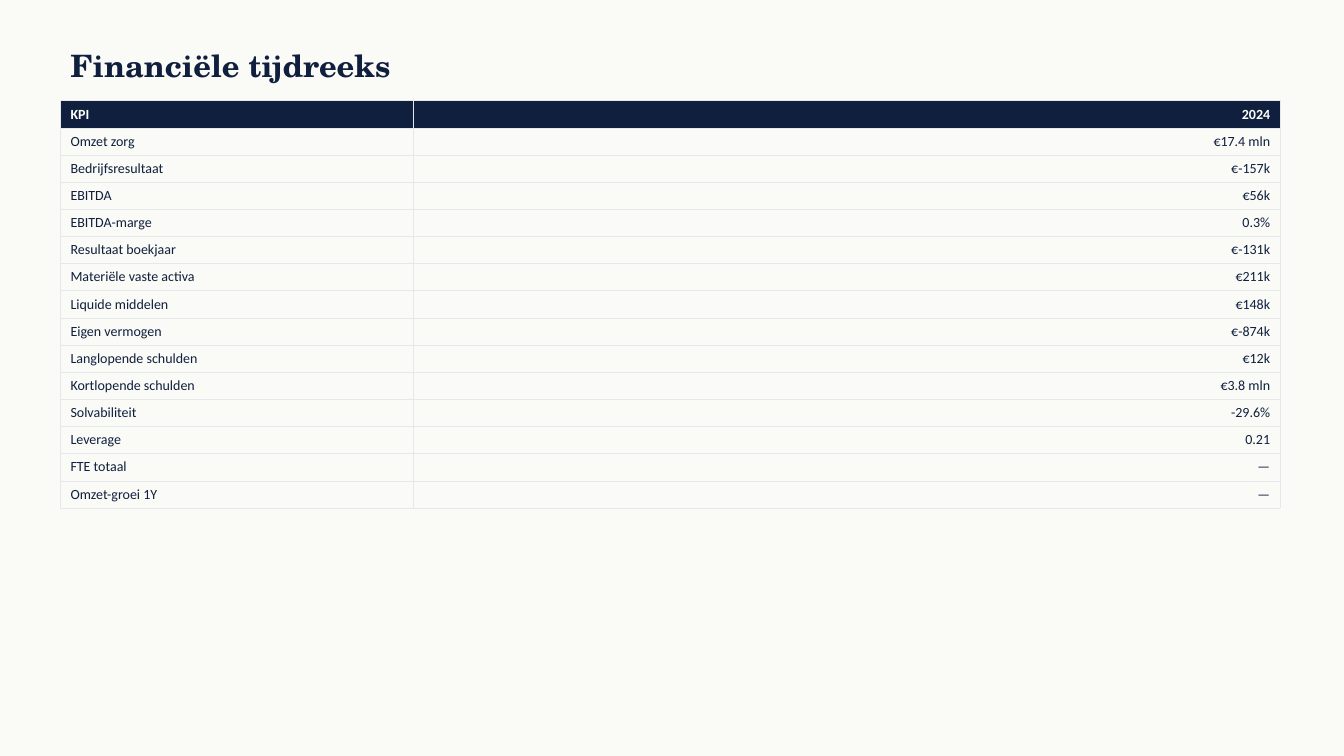
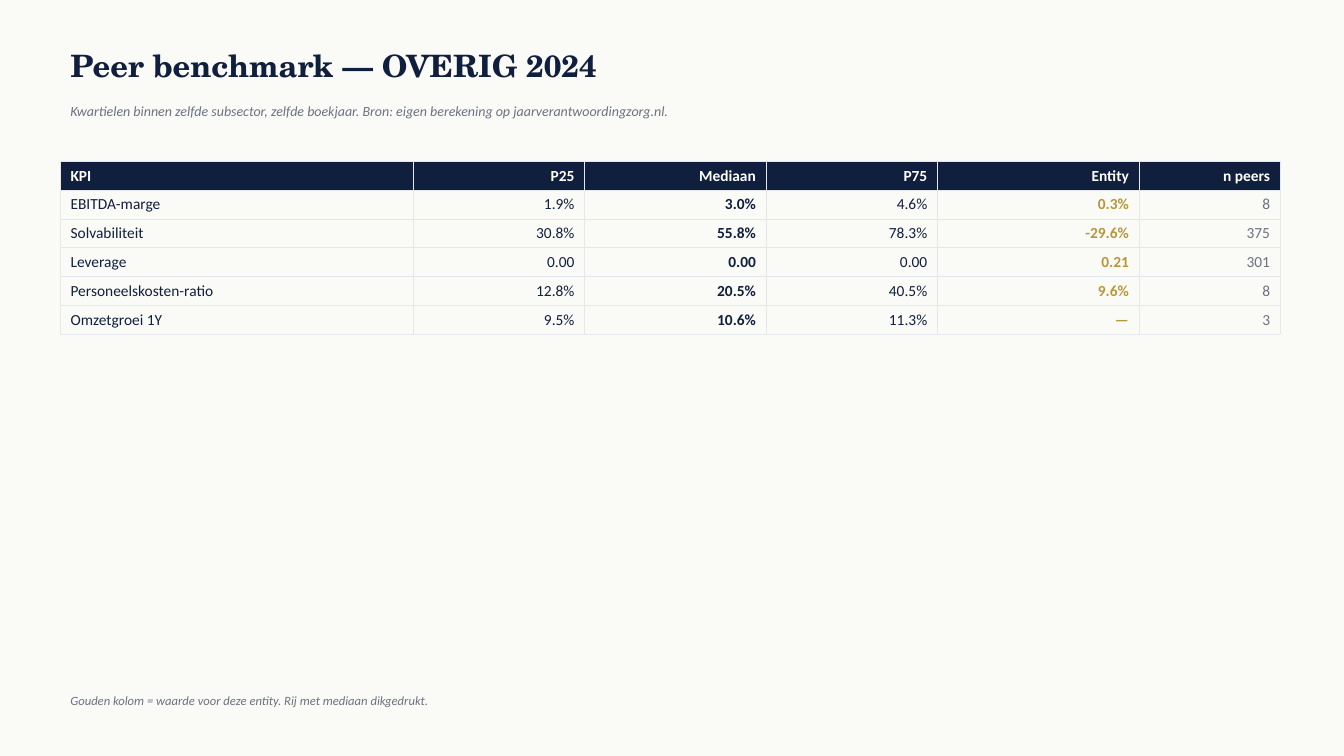
from dataclasses import dataclass

from lxml import etree
from pptx import Presentation
from pptx.dml.color import RGBColor
from pptx.enum.text import MSO_ANCHOR, PP_ALIGN
from pptx.oxml.ns import qn
from pptx.util import Pt

MIDDLE = MSO_ANCHOR.MIDDLE
LEFT, RIGHT = PP_ALIGN.LEFT, PP_ALIGN.RIGHT


@dataclass(frozen=True)
class Theme:
    paper: str = "FAFAF7"
    navy: str = "0F1F3D"
    white: str = "FFFFFF"
    gold: str = "B8973B"
    grey: str = "6B7280"
    rule: str = "E5E7EB"
    serif: str = "TeX Gyre Schola"
    sans: str = "Calibri"
    title: float = 22
    table: float = 11
    dense: float = 10
    lead: float = 10
    note: float = 9
    line: float = 0.5


THEME = Theme()
EDGE, WIDE = 43.2, 864

SERIES = [
    ("KPI", "2024"),
    ("Omzet zorg", "€17.4 mln"),
    ("Bedrijfsresultaat", "€-157k"),
    ("EBITDA", "€56k"),
    ("EBITDA-marge", "0.3%"),
    ("Resultaat boekjaar", "€-131k"),
    ("Materiële vaste activa", "€211k"),
    ("Liquide middelen", "€148k"),
    ("Eigen vermogen", "€-874k"),
    ("Langlopende schulden", "€12k"),
    ("Kortlopende schulden", "€3.8 mln"),
    ("Solvabiliteit", "-29.6%"),
    ("Leverage", "0.21"),
    ("FTE totaal", "—"),
    ("Omzet-groei 1Y", "—"),
]
PEERS = [
    ("KPI", "P25", "Mediaan", "P75", "Entity", "n peers"),
    ("EBITDA-marge", "1.9%", "3.0%", "4.6%", "0.3%", "8"),
    ("Solvabiliteit", "30.8%", "55.8%", "78.3%", "-29.6%", "375"),
    ("Leverage", "0.00", "0.00", "0.00", "0.21", "301"),
    ("Personeelskosten-ratio", "12.8%", "20.5%", "40.5%", "9.6%", "8"),
    ("Omzetgroei 1Y", "9.5%", "10.6%", "11.3%", "—", "3"),
]
# Body style per column: colour, bold
PLAIN = (THEME.navy, False)
LOOKS = {
    "Mediaan": (THEME.navy, True),
    "Entity": (THEME.gold, True),
    "n peers": (THEME.grey, False),
}

SLIDES = [
    {
        "title": "Financiële tijdreeks",
        "rows": SERIES, "cols": (252, 619.2),
        "top": 72, "high": 19.4, "size": THEME.dense,
    },
    {
        "title": "Peer benchmark — OVERIG 2024",
        "lead": "Kwartielen binnen zelfde subsector, zelfde boekjaar. "
                "Bron: eigen berekening op jaarverantwoordingzorg.nl.",
        "rows": PEERS, "cols": (252, 122.4, 129.6, 122.4, 144, 100.8),
        "top": 115.2, "high": 20.6, "size": THEME.table,
        "note": "Gouden kolom = waarde voor deze entity. "
                "Rij met mediaan dikgedrukt.",
    },
]


def style(para, size, color, face=THEME.sans, bold=False, italic=False):
    font = para.font
    font.name, font.size = face, Pt(size)
    font.bold, font.italic = bold, italic
    font.color.rgb = RGBColor.from_string(color)


def add_text(slide, text, top, high, size, color, **look):
    box = slide.shapes.add_textbox(Pt(EDGE), Pt(top), Pt(WIDE), Pt(high))
    frame = box.text_frame
    frame.word_wrap = True
    frame.vertical_anchor = MIDDLE
    frame.text = text
    style(frame.paragraphs[0], size, color, **look)


def add_rules(cell):
    """Draw a thin line on all four sides of a cell."""
    props = cell._tc.get_or_add_tcPr()
    for side in ("lnL", "lnR", "lnT", "lnB"):
        line = etree.SubElement(props, qn(f"a:{side}"), w=str(Pt(THEME.line)))
        fill = etree.SubElement(line, qn("a:solidFill"))
        etree.SubElement(fill, qn("a:srgbClr"), val=THEME.rule)


def add_grid(slide, rows, cols, top, high, size):
    frame = slide.shapes.add_table(
        len(rows), len(cols), Pt(EDGE), Pt(top),
        Pt(sum(cols)), Pt(high * len(rows)))
    table = frame.table
    table.horz_banding = False
    for col, width in zip(table.columns, cols):
        col.width = Pt(width)
    for r, row in enumerate(rows):
        table.rows[r].height = Pt(high)
        for c, text in enumerate(row):
            cell = table.cell(r, c)
            add_rules(cell)
            if r == 0:
                cell.fill.solid()
                cell.fill.fore_color.rgb = RGBColor.from_string(THEME.navy)
                color, bold = THEME.white, True
            else:
                cell.fill.background()
                color, bold = LOOKS.get(rows[0][c], PLAIN)
            cell.text = text
            para = cell.text_frame.paragraphs[0]
            para.alignment = RIGHT if c else LEFT
            style(para, size, color, bold=bold)


def add_slide(deck, page):
    slide = deck.slides.add_slide(deck.slide_layouts[6])
    back = slide.background.fill
    back.solid()
    back.fore_color.rgb = RGBColor.from_string(THEME.paper)
    add_text(slide, page["title"], 28.8, 36, THEME.title, THEME.navy,
             face=THEME.serif, bold=True)
    if "lead" in page:
        add_text(slide, page["lead"], 68.4, 21.6, THEME.lead, THEME.grey,
                 italic=True)
    add_grid(slide, page["rows"], page["cols"], page["top"], page["high"],
             page["size"])
    if "note" in page:
        add_text(slide, page["note"], 489.6, 21.6, THEME.note, THEME.grey,
                 italic=True)


def main():
    deck = Presentation()
    deck.slide_width, deck.slide_height = Pt(960), Pt(540)
    for page in SLIDES:
        add_slide(deck, page)
    deck.save("out.pptx")


if __name__ == "__main__":
    main()
